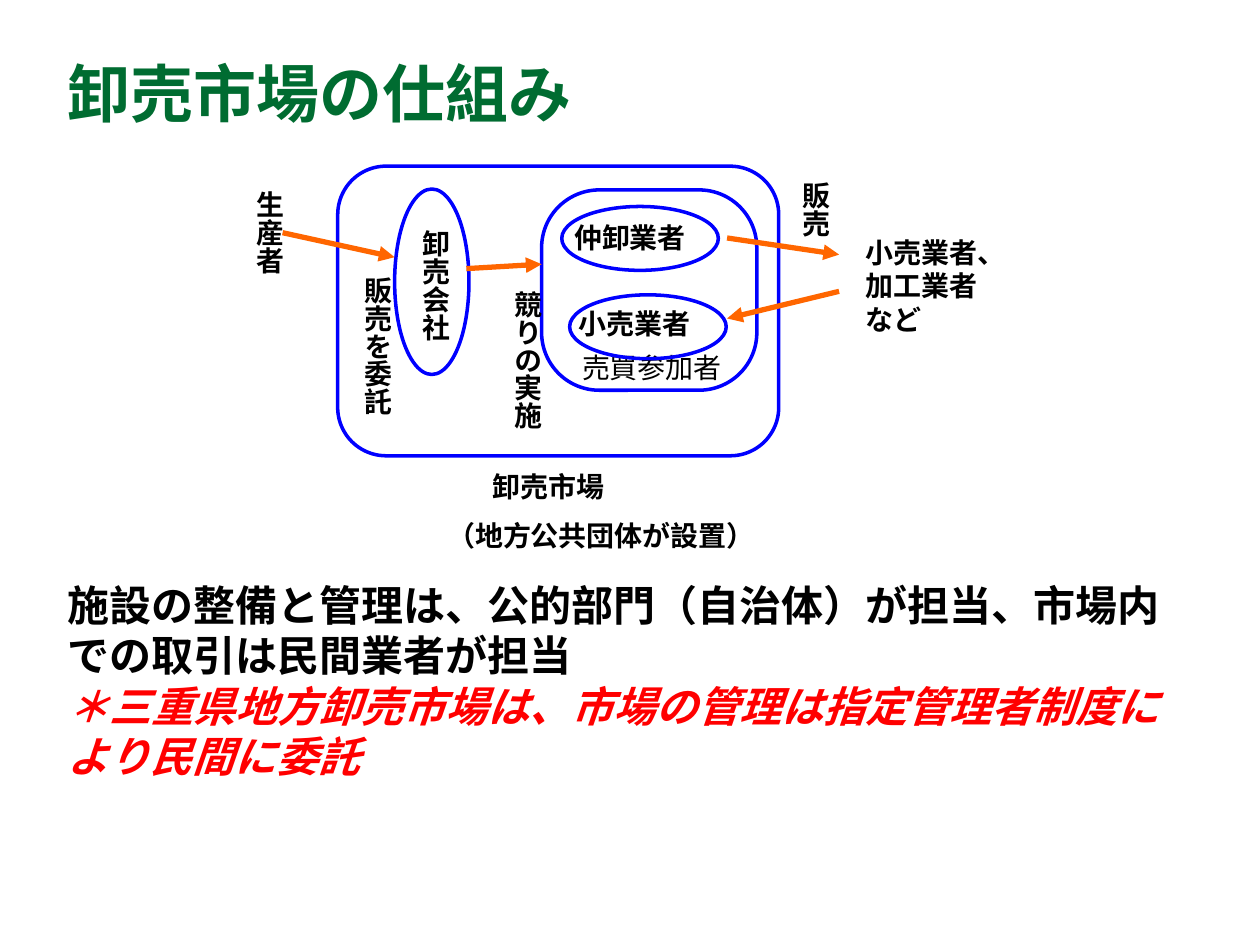
from lxml import etree
from pptx import Presentation
from pptx import util as u
from pptx.dml.color import RGBColor
from pptx.enum import shapes, text
from pptx.oxml.ns import qn

BLUE, ORANGE, GREEN = "0000FF", "FF6600", "006C31"
BLACK, RED = "000000", "FF0000"
SHAPE = shapes.MSO_SHAPE


def color(hex_string):
    """Turn a hex string into a colour."""
    return RGBColor.from_string(hex_string)


def points(values):
    """Turn numbers into lengths in points."""
    return [u.Pt(value) for value in values]


def add_outline(slide, kind, box, corner=None):
    """Add an unfilled blue shape."""
    shape = slide.shapes.add_shape(kind, *points(box))
    shape.shadow.inherit = False
    shape.fill.background()
    shape.line.color.rgb = color(BLUE)
    shape.line.width = u.Pt(2)
    if corner is not None:
        shape.adjustments[0] = corner


def add_arrow(slide, start, end):
    """Add an orange arrow between two positions."""
    arrow = slide.shapes.add_connector(
        shapes.MSO_CONNECTOR.STRAIGHT, *points(start + end))
    arrow.line.color.rgb = color(ORANGE)
    arrow.line.width = u.Pt(3)
    etree.SubElement(arrow.line._get_or_add_ln(), qn("a:tailEnd"), type="triangle")
    etree.SubElement(arrow._element.spPr, qn("a:effectLst"))


def format_paragraph(paragraph, font, size, hex_string, bold=True, italic=False):
    """Format the runs for Latin and East Asian letters alike."""
    for run in paragraph.runs:
        run.font.name = font
        run.font.size = u.Pt(size)
        run.font.bold = bold
        run.font.italic = italic
        run.font.color.rgb = color(hex_string)
        latin = run._r.get_or_add_rPr().find(qn("a:latin"))
        east_asian = etree.Element(qn("a:ea"), typeface=font)
        latin.addnext(east_asian)


def add_text(slide, box, content, vertical=False):
    """Add a wrapping text box, upright if asked, and return its paragraphs."""
    frame = slide.shapes.add_textbox(*points(box)).text_frame
    frame.word_wrap = True
    frame.vertical_anchor = text.MSO_ANCHOR.TOP
    frame.text = content
    if vertical:
        frame._txBody.bodyPr.set("vert", "eaVert")
    return frame.paragraphs


def add_label(slide, box, content, vertical=False):
    """Add a bold diagram label."""
    for paragraph in add_text(slide, box, content, vertical):
        format_paragraph(paragraph, "DejaVu Sans", 16, BLACK)


def add_market(slide):
    """Draw the market, its dealers and the labels inside."""
    add_outline(slide, SHAPE.ROUNDED_RECTANGLE, (193, 95, 252, 165.5), 0.167)
    add_label(slide, (274.5, 265, 106.5, 35), "卸売市場")
    add_label(slide, (248.5, 292.5, 219, 35), "（地方公共団体が設置）")
    add_outline(slide, SHAPE.OVAL, (225.5, 108, 42.5, 106))
    add_label(slide, (199.5, 124.5, 62.5, 83), "卸売会社", vertical=True)
    add_outline(slide, SHAPE.ROUNDED_RECTANGLE, (309.5, 108.5, 123, 114.5), 0.288)
    buyers = add_text(slide, (325.5, 196.5, 106.5, 27), "売買参加者")
    format_paragraph(buyers[0], "Noto Sans CJK JP", 16, BLACK, bold=False)
    for left, top in ((321, 118), (325.5, 168.5)):
        add_outline(slide, SHAPE.OVAL, (left, top, 89.5, 36.5))
    add_label(slide, (321, 122.5, 89.5, 61), "仲卸業者")
    add_label(slide, (323.5, 171.5, 89.5, 60.5), "小売業者")


def add_flows(slide):
    """Draw the trade flows with the outside parties."""
    add_label(slide, (126.5, 102, 40.5, 114.5), "生産者", vertical=True)
    add_label(slide, (166.5, 151, 62.5, 106), "販売を委託", vertical=True)
    add_label(slide, (252, 159, 62.5, 106), "競りの実施", vertical=True)
    add_label(slide, (438.5, 97, 40.5, 60), "販売", vertical=True)
    add_label(slide, (487.5, 131, 78.5, 65.5), "小売業者、加工業者など")
    for start, end in (
        ((161.5, 133), (225.5, 147)),
        ((266.5, 153.5), (309.5, 151)),
        ((415.5, 136), (479.5, 145.5)),
        ((479.5, 166.5), (415.5, 182)),
    ):
        add_arrow(slide, start, end)


def main():
    """Build the slide and save it."""
    presentation = Presentation()
    presentation.slide_width, presentation.slide_height = points((720, 540))
    slide = presentation.slides.add_slide(presentation.slide_layouts[6])

    title = add_text(slide, (31.5, 27.5, 592, 51), "卸売市場の仕組み")
    format_paragraph(title[0], "Calibri", 36, GREEN)
    add_market(slide)
    add_flows(slide)
    summary, note = add_text(
        slide, (31.5, 327.5, 656, 124),
        "施設の整備と管理は、公的部門（自治体）が担当、市場内での取引は民間業者が担当\n"
        "＊三重県地方卸売市場は、市場の管理は指定管理者制度により民間に委託")
    format_paragraph(summary, "Calibri", 24, BLACK)
    format_paragraph(note, "Calibri", 24, RED, italic=True)
    presentation.save("out.pptx")


if __name__ == "__main__":
    main()
